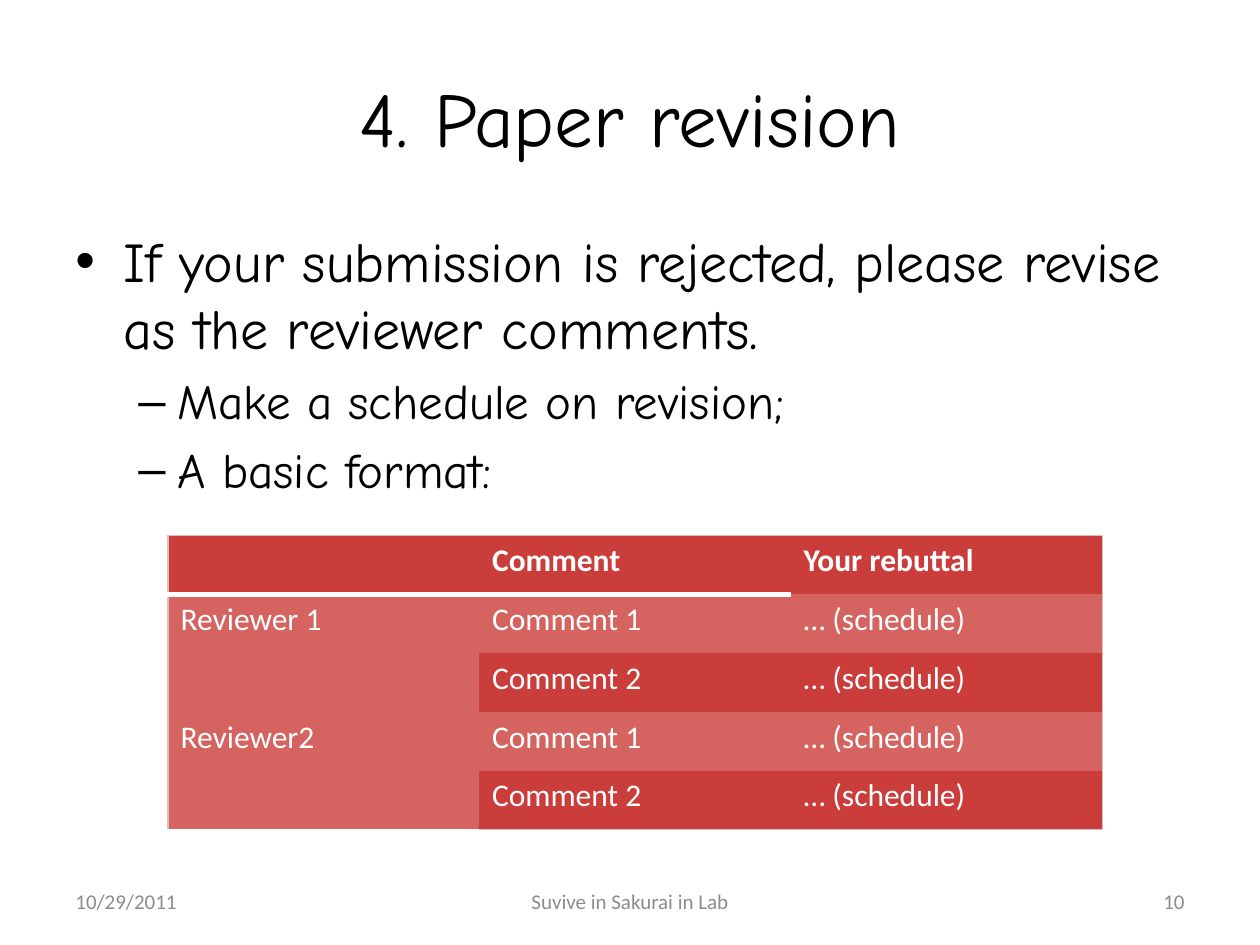
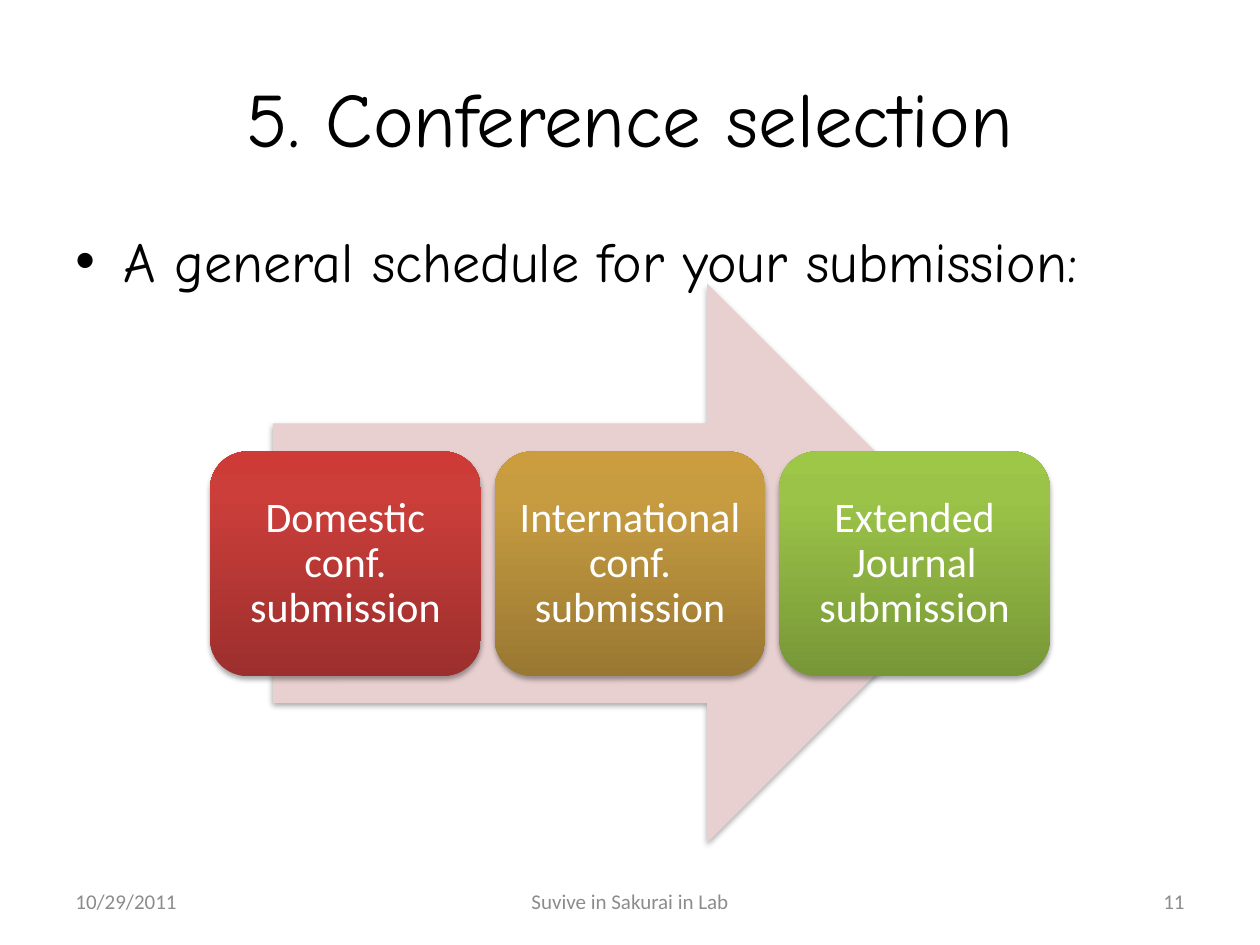
from lxml import etree
from pptx import Presentation
from pptx.dml.color import RGBColor
from pptx.enum.shapes import MSO_SHAPE
from pptx.enum.text import MSO_ANCHOR, PP_ALIGN
from pptx.oxml.ns import qn
from pptx.util import Inches, Pt

BLACK = RGBColor(0x00, 0x00, 0x00)
WHITE = RGBColor(0xFF, 0xFF, 0xFF)
GREY = RGBColor(0x8C, 0x8C, 0x8C)
EDGE = RGBColor(0xDE, 0xBD, 0xBD)
DARK = RGBColor(0xCB, 0x3D, 0x3A)
LIGHT = RGBColor(0xD5, 0x64, 0x61)
PINK = RGBColor(0xE8, 0xD0, 0xD0)
RED = (RGBColor(0x9C, 0x2F, 0x2D), RGBColor(0xCB, 0x3E, 0x3A), RGBColor(0xCE, 0x3B, 0x37))
GOLD = (RGBColor(0x99, 0x78, 0x32), RGBColor(0xC7, 0x9C, 0x41), RGBColor(0xCB, 0x9D, 0x3F))
GREEN = (RGBColor(0x77, 0x97, 0x37), RGBColor(0x9B, 0xC3, 0x48), RGBColor(0x9D, 0xC7, 0x46))

LEFT, CENTER, RIGHT = PP_ALIGN.LEFT, PP_ALIGN.CENTER, PP_ALIGN.RIGHT
TOP, MIDDLE = MSO_ANCHOR.TOP, MSO_ANCHOR.MIDDLE
ARROW, ROUND = MSO_SHAPE.RIGHT_ARROW, MSO_SHAPE.ROUNDED_RECTANGLE
HAND, SANS = "Comic Neue", "Calibri"
LEVELS = (("•", 32, 0.38, 0.38), ("–", 28, 0.81, 0.31))
DATE, FOOT = "10/29/2011", "Suvive in Sakurai in Lab"
HEAD = ("", "Comment", "Your rebuttal")
NAMES = ("Reviewer 1", "Reviewer2")
NOTES = ("Comment 1", "Comment 2")
STEPS = (
    ("Domestic conf. submission", RED),
    ("International conf. submission", GOLD),
    ("Extended Journal submission", GREEN),
)


def node(parent, tag, **attrs):
    """Append a child element with the given attributes."""
    child = etree.SubElement(parent, qn(tag))
    for key, value in attrs.items():
        child.set(key, str(value))
    return child


class Deck:
    """Draw styled elements on a grid of 120 columns and 90 rows."""

    def __init__(self):
        """Start an empty deck."""
        self.show = Presentation()
        self.show.slide_width, self.show.slide_height = Inches(10), Inches(7.5)
        self.unit = self.show.slide_width / 120

    def grid(self, *cells):
        """Turn grid counts into lengths."""
        return [round(n * self.unit) for n in cells]

    def page(self, title, points):
        """Add a slide with its title, bullet points and footer."""
        self.slide = self.show.slides.add_slide(self.show.slide_layouts[6])
        self.text((6, 3.6, 108, 15), title, 44, HAND, BLACK, CENTER)
        self.points((6, 21, 108, 59.4), points)
        count = str(len(self.show.slides) + 9)
        feet = ((6, 28, DATE, LEFT), (41, 38, FOOT, CENTER), (86, 28, count, RIGHT))
        for left, width, words, align in feet:
            self.text((left, 83.4, width, 4.8), words, 12, SANS, GREY, align)

    def style(self, para, size, font, color, bold=False):
        """Format every run of a paragraph."""
        for run in para.runs:
            run.font.size, run.font.name, run.font.bold = Pt(size), font, bold
            run.font.color.rgb = color

    def frame(self, box, anchor):
        """Add a wrapping text frame."""
        frame = self.slide.shapes.add_textbox(*self.grid(*box)).text_frame
        frame.word_wrap = True
        frame.vertical_anchor = anchor
        return frame

    def text(self, box, words, size, font, color, align):
        """Add one line of text."""
        frame = self.frame(box, MIDDLE)
        frame.text = words
        para = frame.paragraphs[0]
        para.alignment = align
        self.style(para, size, font, color)

    def points(self, box, points):
        """Add bullet points given as level and words."""
        frame = self.frame(box, TOP)
        frame.text = "\n".join(words for _, words in points)
        for para, (level, _) in zip(frame.paragraphs, points):
            mark, size, left, hang = LEVELS[level]
            self.style(para, size, HAND, BLACK)
            para.level = level
            props = para._p.get_or_add_pPr()
            props.set("marL", str(Inches(left)))
            props.set("indent", str(-Inches(hang)))
            node(node(props, "a:spcBef"), "a:spcPct", val=20000)
            node(props, "a:buFont", typeface="Arial")
            node(props, "a:buChar", char=mark)

    def shape(self, kind, box, fill):
        """Add a shape with a flat or graded fill and a soft shadow."""
        shape = self.slide.shapes.add_shape(kind, *self.grid(*box))
        props = shape._element.spPr
        if isinstance(fill, RGBColor):
            shape.fill.solid()
            shape.fill.fore_color.rgb = fill
        else:
            grad = node(props, "a:gradFill", rotWithShape=1)
            stops = node(grad, "a:gsLst")
            for place, color in zip((0, 80000, 100000), fill):
                node(node(stops, "a:gs", pos=place), "a:srgbClr", val=color)
            node(grad, "a:lin", ang=270 * 60000, scaled=0)
        shape.line.fill.background()
        shape.shadow.inherit = False
        shade = node(props.find(qn("a:effectLst")), "a:outerShdw", blurRad=Pt(3.1),
                     dist=Pt(1.8), dir=90 * 60000, rotWithShape=0)
        node(node(shade, "a:srgbClr", val=BLACK), "a:alpha", val=35000)
        return shape

    def step(self, box, words, fill):
        """Add a rounded box with centred words."""
        frame = self.shape(ROUND, box, fill).text_frame
        frame.text = words
        frame.word_wrap = True
        frame.vertical_anchor = MIDDLE
        frame.margin_left = frame.margin_right = Inches(0.1)
        frame.margin_top = frame.margin_bottom = Inches(0.1)
        para = frame.paragraphs[0]
        para.alignment, para.line_spacing = CENTER, 0.9
        self.style(para, 24, SANS, WHITE)

    def edge(self, cell, side, line):
        """Set or clear one border of a cell."""
        color, width = line or (None, 0)
        rule = node(cell._tc.get_or_add_tcPr(), "a:ln" + side, w=Pt(width))
        if color is None:
            node(rule, "a:noFill")
        else:
            node(node(rule, "a:solidFill"), "a:srgbClr", val=color)

    def table(self, box, rows):
        """Add a table whose first column joins pairs of rows."""
        high, wide = len(rows), len(rows[0])
        table = self.slide.shapes.add_table(high, wide, *self.grid(*box)).table
        thin, thick = (EDGE, 0.75), (WHITE, 3)
        for r, row in enumerate(rows):
            for c, words in enumerate(row):
                cell = table.cell(r, c)
                cell.text = words
                self.style(cell.text_frame.paragraphs[0], 18, SANS, WHITE, r == 0)
                under = thick if r == 0 and c < wide - 1 else None
                self.edge(cell, "L", thin if c == 0 else None)
                self.edge(cell, "R", thin if c == wide - 1 else None)
                self.edge(cell, "T", thin if r == 0 else None)
                self.edge(cell, "B", thin if r == high - 1 else under)
                cell.fill.solid()
                pale = r > 0 and (r % 2 == 1 or c == 0)
                cell.fill.fore_color.rgb = LIGHT if pale else DARK
        for r in range(1, high, 2):
            table.cell(r, 0).merge(table.cell(r + 1, 0))


def main():
    """Build both slides and save them."""
    deck = Deck()
    deck.page("4. Paper revision", (
        (0, "If your submission is rejected, please revise as the reviewer comments."),
        (1, "Make a schedule on revision;"),
        (1, "A basic format:"),
    ))
    rows = [(name if note == NOTES[0] else "", note, "… (schedule)")
            for name in NAMES for note in NOTES]
    deck.table((16, 51, 89, 28), [HEAD] + rows)

    deck.page("5. Conference selection", ((0, "A general schedule for your submission:"),))
    deck.shape(ARROW, (26, 27, 68, 53.3), PINK)
    for i, (words, fill) in enumerate(STEPS):
        deck.step((20 + 27.1 * i, 43, 25.8, 21.4), words, fill)
    deck.show.save("out.pptx")


if __name__ == "__main__":
    main()
